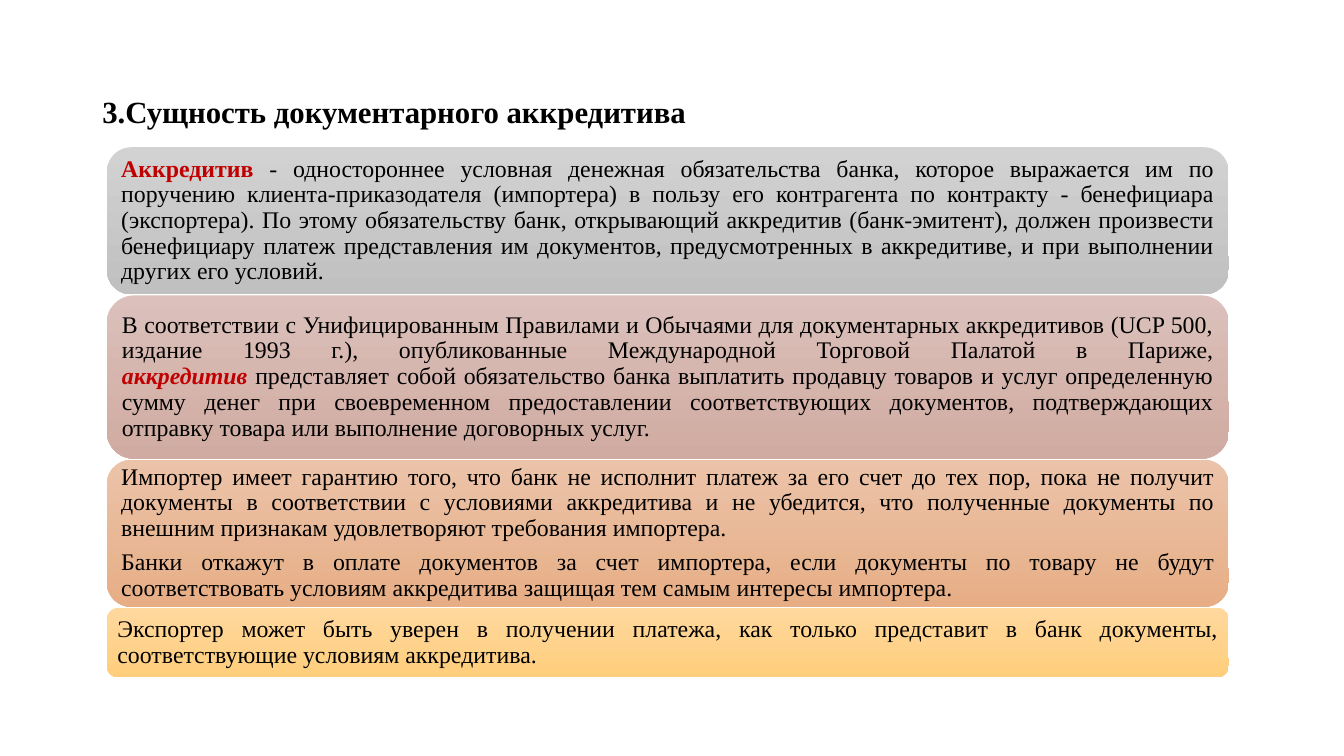
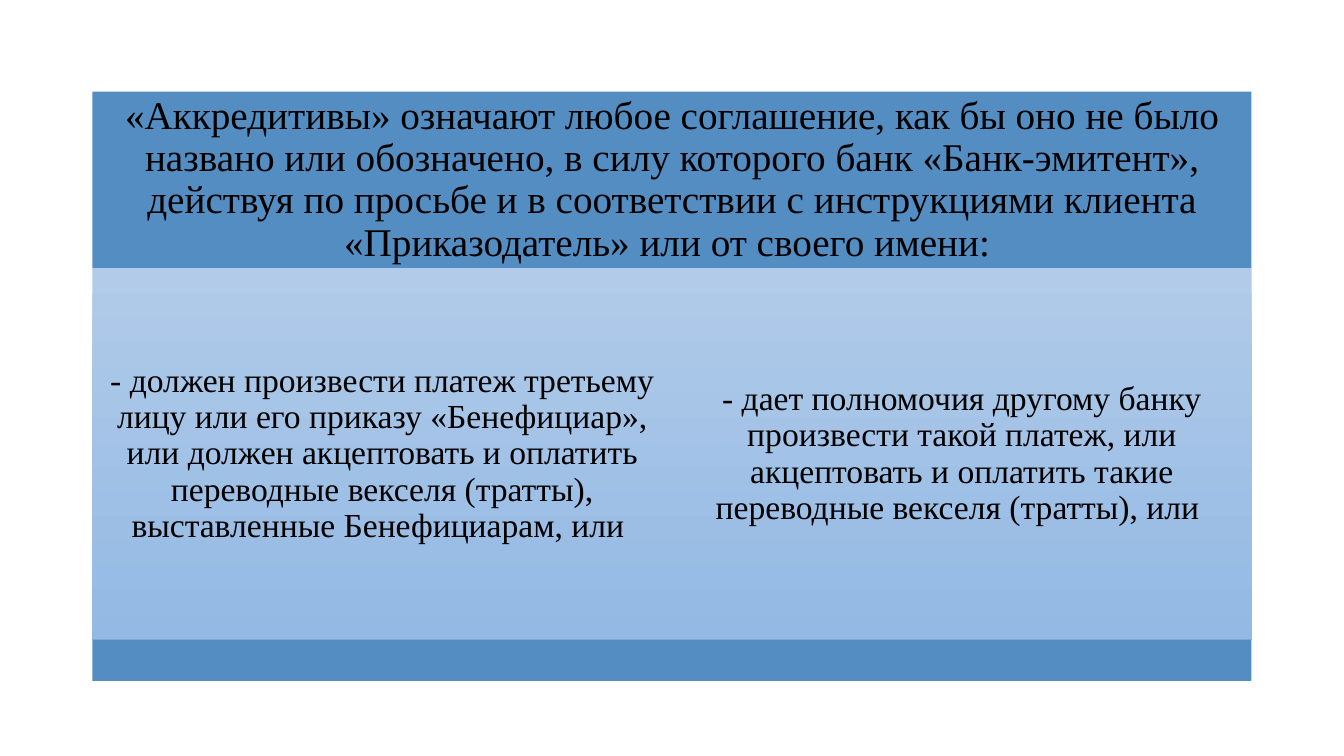
from dataclasses import dataclass

from pptx import Presentation
from pptx.dml.color import RGBColor
from pptx.enum.shapes import MSO_SHAPE
from pptx.enum.text import MSO_ANCHOR, PP_ALIGN
from pptx.util import Pt


@dataclass(frozen=True)
class Theme:
    font: str = "Times New Roman"
    text: str = "000000"
    accent: str = "C00000"
    band: tuple = ("538DC1",)
    column: tuple = ("B1CBE9", "93B9E4")
    grey: tuple = ("D2D2D2", "C0C0C0")
    rose: tuple = ("DBC0BB", "D0ABA1")
    orange: tuple = ("EBC3A8", "E7AE86")
    yellow: tuple = ("FFD89E", "FFCE7C")
    title_size: float = 22
    panel_size: float = 17
    heading_size: float = 28
    column_size: float = 24
    line_spacing: float = 0.9
    paragraph_gap: float = 6


THEME = Theme()
LEFT, TOP, WIDTH = 66, 65.5, 828


def write(frame, paragraphs, size, align):
    """Fill a frame; each paragraph is a list of (text, style), style holding "b" and "i"."""
    frame.word_wrap = True
    for number, spans in enumerate(paragraphs):
        para = frame.add_paragraph() if number else frame.paragraphs[0]
        para.alignment = align
        para.line_spacing = THEME.line_spacing
        if number:
            para.space_before = Pt(THEME.paragraph_gap)
        para.font.name = THEME.font
        para.font.size = Pt(size)
        para.font.color.rgb = RGBColor.from_string(THEME.text)
        for text, style in spans:
            for part, piece in enumerate(text.split("\n")):
                if part:
                    para.add_line_break()
                if not piece:
                    continue
                span = para.add_run()
                span.text = piece
                span.font.name = THEME.font
                span.font.size = Pt(size)
                color = THEME.accent if style else THEME.text
                span.font.color.rgb = RGBColor.from_string(color)
                if style:
                    span.font.bold = "b" in style
                    span.font.italic = "i" in style


def add_panel(page, preset, bounds, colors, paragraphs, size, align):
    """Add a borderless shape, plain or shaded downwards, with its text."""
    box = page.shapes.add_shape(preset, *(Pt(length) for length in bounds))
    box.shadow.inherit = False
    box.line.fill.background()
    if len(colors) == 1:
        box.fill.solid()
        box.fill.fore_color.rgb = RGBColor.from_string(colors[0])
    else:
        box.fill.gradient()
        box.fill.gradient_angle = 270
        for stop, color in zip(box.fill.gradient_stops, colors):
            stop.color.rgb = RGBColor.from_string(color)
    frame = box.text_frame
    frame.vertical_anchor = MSO_ANCHOR.MIDDLE
    inset = Pt(round(0.3 * size, 1))
    frame.margin_left = frame.margin_right = inset
    frame.margin_top = frame.margin_bottom = inset
    write(frame, paragraphs, size, align)


deck = Presentation()
deck.slide_width, deck.slide_height = Pt(960), Pt(540)
blank = deck.slide_layouts[6]

# Slide 1: title and a stack of rounded panels
page = deck.slides.add_slide(blank)
title = page.shapes.add_textbox(Pt(LEFT), Pt(TOP), Pt(WIDTH), Pt(36))
write(title.text_frame, [[("3.Сущность документарного аккредитива", "")]],
      THEME.title_size, PP_ALIGN.LEFT)
title.text_frame.paragraphs[0].runs[0].font.bold = True

panels = [
    (105.1, THEME.grey, [[
        ("Аккредитив", "b"),
        (" - одностороннее условная денежная обязательства банка, которое выражается им "
         "по поручению клиента-приказодателя (импортера) в пользу его контрагента по "
         "контракту - бенефициара (экспортера). По этому обязательству банк, открывающий "
         "аккредитив (банк-эмитент), должен произвести бенефициару платеж представления "
         "им документов, предусмотренных в аккредитиве, и при выполнении других его "
         "условий.", ""),
    ]]),
    (116.6, THEME.rose, [[
        ("В соответствии с Унифицированным Правилами и Обычаями для документарных "
         "аккредитивов (UCP 500, издание 1993 г.), опубликованные Международной Торговой "
         "Палатой в Париже,\n", ""),
        ("аккредитив", "bi"),
        (" представляет собой обязательство банка выплатить продавцу товаров и услуг "
         "определенную сумму денег при своевременном предоставлении соответствующих "
         "документов, подтверждающих отправку товара или выполнение договорных услуг.", ""),
    ]]),
    (105.1, THEME.orange, [
        [("Импортер имеет гарантию того, что банк не исполнит платеж за его счет до тех "
          "пор, пока не получит документы в соответствии с условиями аккредитива и не "
          "убедится, что полученные документы по внешним признакам удовлетворяют "
          "требования импортера.", "")],
        [("Банки откажут в оплате документов за счет импортера, если документы по товару "
          "не будут соответствовать условиям аккредитива защищая тем самым интересы "
          "импортера.", "")],
    ]),
    (49.7, THEME.yellow, [[
        ("Экспортер может быть уверен в получении платежа, как только представит в банк "
         "документы, соответствующие условиям аккредитива.", ""),
    ]]),
]
panel_left, panel_width, panel_gap = 76.3, 801.4, 0.7
panel_top = 105.2
for height, colors, paragraphs in panels:
    add_panel(page, MSO_SHAPE.ROUNDED_RECTANGLE,
              (panel_left, panel_top, panel_width, height),
              colors, paragraphs, THEME.panel_size, PP_ALIGN.JUSTIFY)
    panel_top += height + panel_gap

# Slide 2: heading band, two columns, closing band
page = deck.slides.add_slide(blank)
heading_height, column_height, footer_height = 126.2, 265.2, 29.5
column_top = TOP + heading_height
column_width = WIDTH / 2

heading = (
    "«Аккредитивы» означают любое соглашение, как бы оно не было названо или обозначено, "
    "в силу которого банк «Банк-эмитент», действуя по просьбе и в соответствии с "
    "инструкциями клиента «Приказодатель» или от своего имени: "
)
columns = [
    "- должен произвести платеж третьему лицу или его приказу «Бенефициар», или должен "
    "акцептовать и оплатить переводные векселя (тратты), выставленные Бенефициарам, или ",
    "- дает полномочия другому банку произвести такой платеж, или акцептовать и оплатить "
    "такие переводные векселя (тратты), или ",
]
add_panel(page, MSO_SHAPE.RECTANGLE, (LEFT, TOP, WIDTH, heading_height),
          THEME.band, [[(heading, "")]], THEME.heading_size, PP_ALIGN.CENTER)
for index, text in enumerate(columns):
    add_panel(page, MSO_SHAPE.RECTANGLE,
              (LEFT + index * column_width, column_top, column_width, column_height),
              THEME.column, [[(text, "")]], THEME.column_size, PP_ALIGN.CENTER)
add_panel(page, MSO_SHAPE.RECTANGLE,
          (LEFT, column_top + column_height, WIDTH, footer_height),
          THEME.band, [], THEME.column_size, PP_ALIGN.CENTER)

deck.save("out.pptx")
